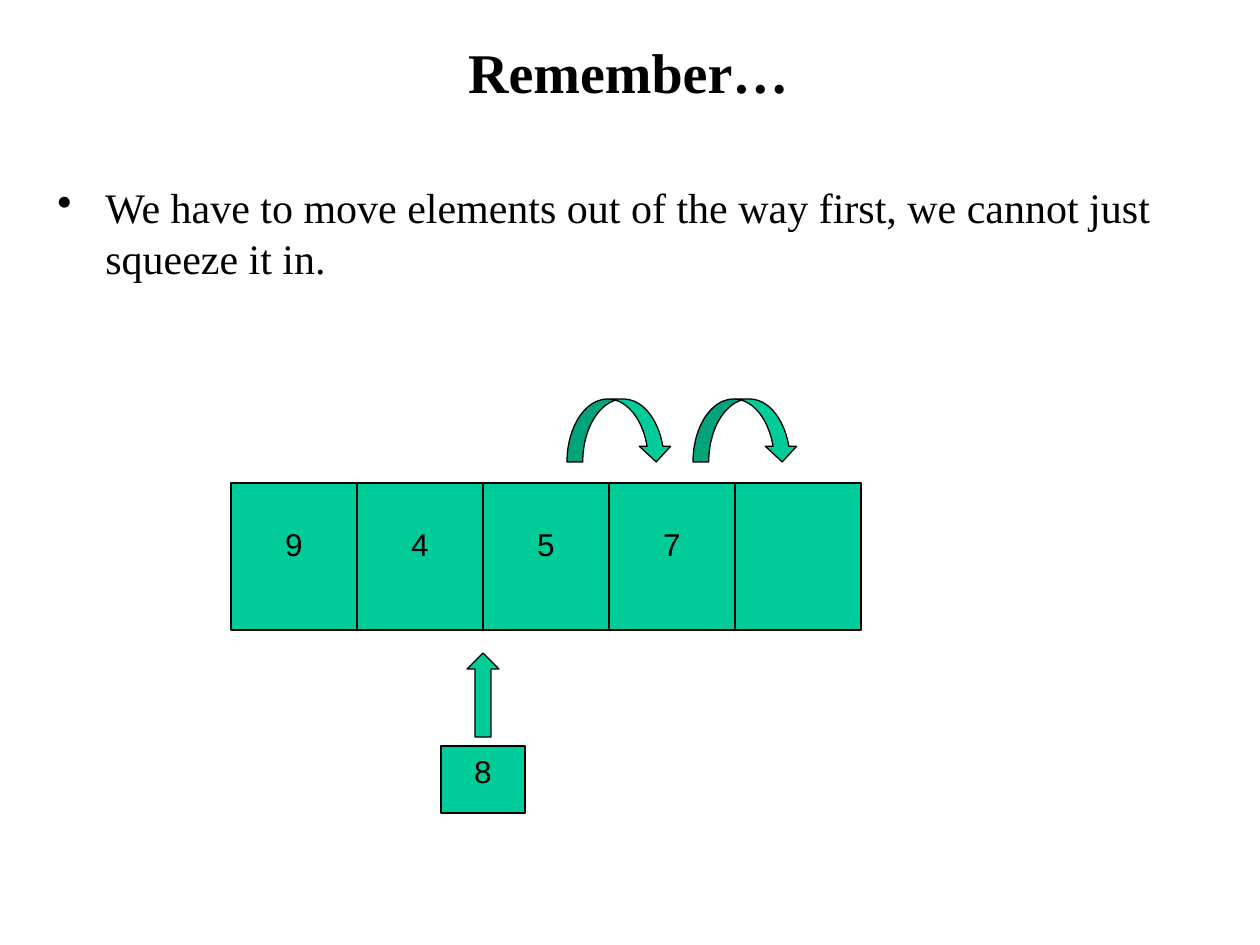
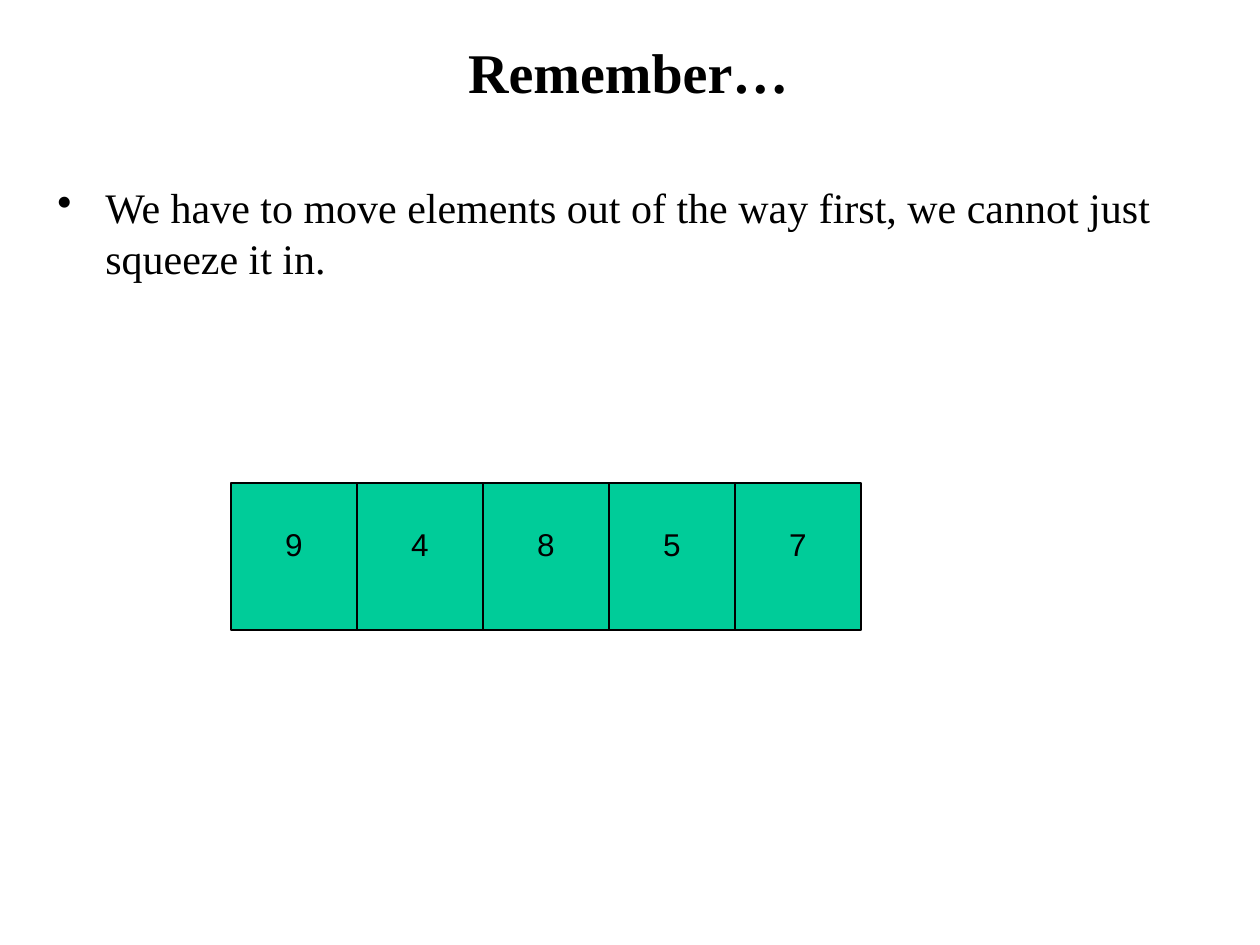
"""Build two slides showing how inserting into an array moves its elements."""
import pptx
import pptx.util
import pptx.dml.color
import pptx.enum.shapes
import pptx.enum.text
import pptx.oxml

PX = 914400 / 126
GREEN, BLACK = "00CC99", "000000"
MSO = pptx.enum.shapes.MSO_SHAPE
ANCHOR = pptx.enum.text.MSO_ANCHOR
ALIGN = pptx.enum.text.PP_ALIGN
TITLE = {"name": "Times New Roman", "size": pptx.util.Pt(32), "bold": True}
BODY = {"name": "Times New Roman", "size": pptx.util.Pt(24), "bold": False}
DIGIT = {"name": "Arial", "size": pptx.util.Pt(18), "bold": False}


def write(sp, text, font, align, anchor=ANCHOR.TOP, top=6):
    tf = sp.text_frame
    frame = {"word_wrap": True, "vertical_anchor": anchor, "margin_top": round(top * PX)}
    for key, value in frame.items():
        setattr(tf, key, value)
    p = tf.paragraphs[0]
    p.alignment = align
    r = p.add_run()
    r.text = text
    for key, value in font.items():
        setattr(r.font, key, value)
    r.font.color.rgb = pptx.dml.color.RGBColor.from_string(BLACK)
    return p


def add_block(s, kind, *box):
    sp = s.shapes.add_shape(kind, *(round(v * PX) for v in box))
    sp.shadow.inherit = False
    sp.fill.solid()
    sp.fill.fore_color.rgb = pptx.dml.color.RGBColor.from_string(GREEN)
    sp.line.color.rgb = pptx.dml.color.RGBColor.from_string(BLACK)
    sp.line.width = pptx.util.Pt(0.75)
    return sp


prs = pptx.Presentation()
prs.slide_width, prs.slide_height = round(1260 * PX), round(945 * PX)

for values in (["9", "4", "5", "7", ""], ["9", "4", "8", "5", "7"]):
    s = prs.slides.add_slide(prs.slide_layouts[6])

    title = s.shapes.add_textbox(*(round(v * PX) for v in (93, 8, 1071, 127)))
    write(title, "Remember…", TITLE, ALIGN.CENTER, ANCHOR.MIDDLE)

    body = s.shapes.add_textbox(*(round(v * PX) for v in (45, 176, 1172, 728)))
    p = write(body, "We have to move elements out of the way first, we cannot just squeeze it in.",
              BODY, ALIGN.LEFT)
    pPr = p._p.get_or_add_pPr()
    pPr.set("marL", str(round(48 * PX)))
    pPr.set("indent", str(round(-48 * PX)))
    ns = "http://schemas.openxmlformats.org/drawingml/2006/main"
    pPr.append(pptx.oxml.parse_xml(f'<a:buChar xmlns:a="{ns}" char="•"/>'))

    for i, value in enumerate(values):
        cell = add_block(s, MSO.RECTANGLE, 231 + 126 * i, 483, 126, 147)
        if value:
            write(cell, value, DIGIT, ALIGN.CENTER, top=42)

    if "8" not in values:
        new = add_block(s, MSO.RECTANGLE, 441, 746, 84, 67)
        write(new, "8", DIGIT, ALIGN.CENTER)
        add_block(s, MSO.UP_ARROW, 467, 653, 32, 84)
        for x in (693, 567):
            add_block(s, MSO.CURVED_DOWN_ARROW, x, 399, 105, 63)

prs.save("out.pptx")
